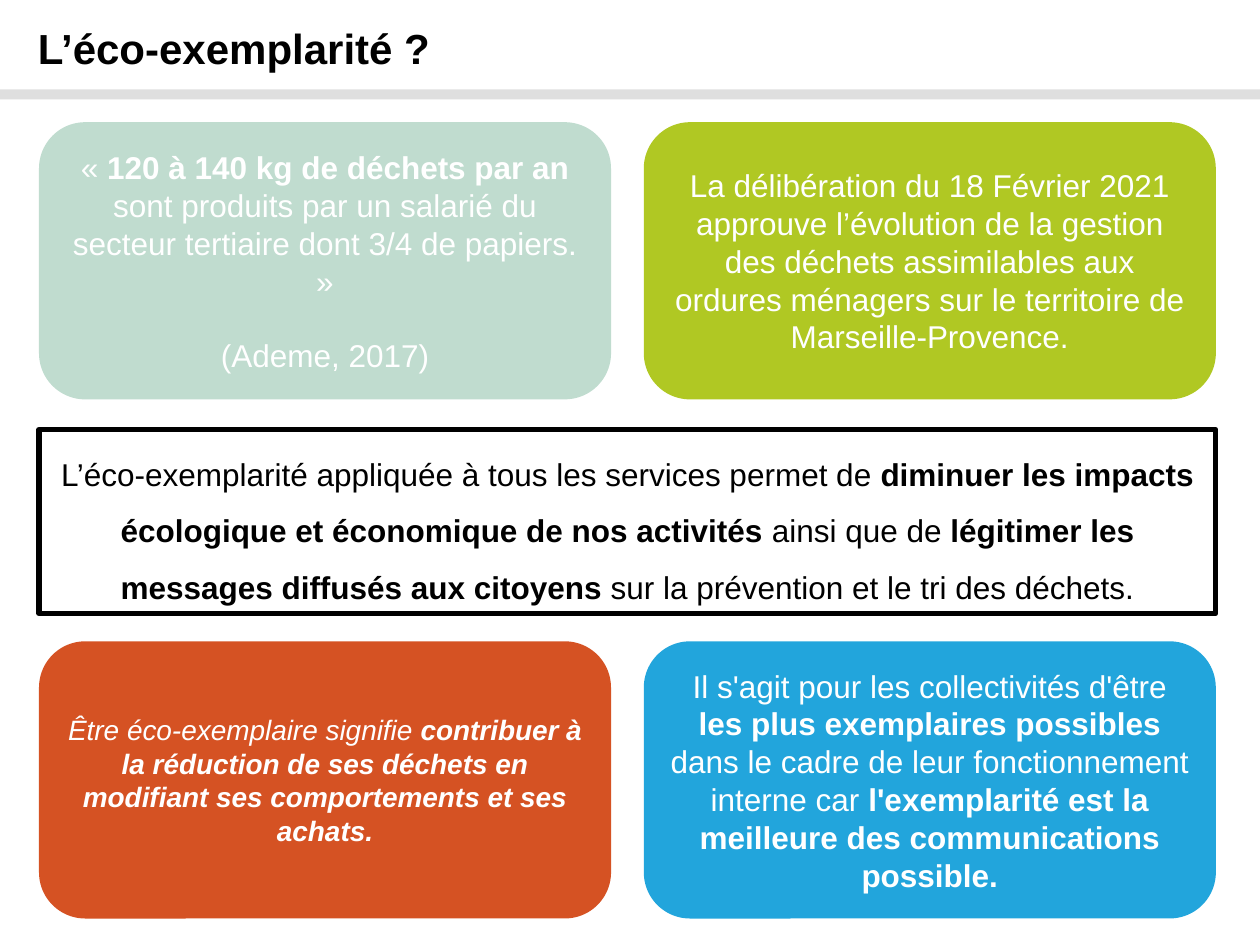
import collections
import dataclasses

import pptx
import pptx.dml.color
import pptx.enum.shapes
import pptx.enum.text
import pptx.util

Box = collections.namedtuple("Box", "left top width height")
Inches = pptx.util.Inches
SHAPES = pptx.enum.shapes.MSO_SHAPE
ALIGN = pptx.enum.text.PP_ALIGN
ANCHOR = pptx.enum.text.MSO_ANCHOR


@dataclasses.dataclass(frozen=True)
class Theme:
    """Colours and type sizes of the slide."""

    font: str = "Arial"
    title: int = 24
    body: int = 18
    small: int = 16
    dark: str = "000000"
    light: str = "FFFFFF"
    rule: str = "DFDFDF"
    mint: str = "C0DCCF"
    green: str = "B0C823"
    orange: str = "D55223"
    blue: str = "22A5DC"


THEME = Theme()
WIDTH, HEIGHT = 10, 7.5
MARGIN, GUTTER = 0.31, 0.26
COLUMN = 4.54
CARD_HEIGHT = 2.2
CONTENT_WIDTH = 2 * COLUMN + GUTTER
TITLE_BOX = Box(0.2, 0.13, 0.74 * WIDTH, 0.47)
RULE_BOX = Box(0, 0.71, WIDTH, 0.08)
MESSAGE_BOX = Box(MARGIN, 3.41, CONTENT_WIDTH, 1.46)
FACTS_TOP, GOALS_TOP = 0.97, 5.09

TITLE = "L’éco-exemplarité ?"
MESSAGE = (
    "L’éco-exemplarité appliquée à tous les services permet de *diminuer les impacts "
    "écologique et économique de nos activités *ainsi que de *légitimer les messages "
    "diffusés aux citoyens* sur la prévention et le tri des déchets."
)
WASTE = (
    "« *120 à 140 kg de déchets par an *sont produits par un salarié du "
    "secteur tertiaire dont 3/4 de papiers. »"
)
WASTE_SOURCE = "(Ademe, 2017)"
DECISION = (
    "La délibération du 18 Février 2021 approuve l’évolution de la gestion des déchets "
    "assimilables aux ordures ménagers sur le territoire de Marseille-Provence."
)
MEANING = (
    "Être éco-exemplaire signifie *contribuer à la réduction de ses déchets en "
    "modifiant ses comportements et ses achats."
)
EXAMPLE = (
    "Il s'agit pour les collectivités d'être *les plus exemplaires possibles* dans le "
    "cadre de leur fonctionnement interne car *l'exemplarité est la meilleure des "
    "communications possible."
)


def rgb(value):
    """Turn a hex string into a colour."""
    return pptx.dml.color.RGBColor.from_string(value)


def add_block(s, kind, box, fill=None):
    """Add a flat shape in the box, without outline or shadow."""
    sp = s.shapes.add_shape(kind, *map(Inches, box))
    sp.shadow.inherit = False
    sp.line.fill.background()
    if fill:
        sp.fill.solid()
        sp.fill.fore_color.rgb = rgb(fill)
    else:
        sp.fill.background()
    return sp


def write(p, text, size, color, align=ALIGN.CENTER, italic=False, bold=False):
    """Write a paragraph in which asterisks switch bold on and off."""
    p.alignment = align
    for i, part in enumerate(text.split("*")):
        r = p.add_run()
        r.text = part
        r.font.name = THEME.font
        r.font.size = pptx.util.Pt(size)
        r.font.color.rgb = rgb(color)
        r.font.bold = bold or i % 2 == 1
        r.font.italic = italic


def add_header(s, title_box, rule_box):
    """Place the title and the grey rule under it."""
    add_block(s, SHAPES.RECTANGLE, rule_box, THEME.rule)
    sp = s.shapes.title
    sp.left, sp.top, sp.width, sp.height = map(Inches, title_box)
    sp.fill.solid()
    sp.fill.fore_color.rgb = rgb(THEME.light)
    tf = sp.text_frame
    tf.auto_size = pptx.enum.text.MSO_AUTO_SIZE.NONE
    tf.vertical_anchor = ANCHOR.TOP
    p = tf.paragraphs[0]
    p.line_spacing = 1.0
    write(p, TITLE, THEME.title, THEME.dark, ALIGN.LEFT, bold=True)


def add_message(s, box):
    """Place the framed key message."""
    sp = add_block(s, SHAPES.RECTANGLE, box)
    sp.line.color.rgb = rgb(THEME.dark)
    sp.line.width = pptx.util.Pt(3)
    tf = sp.text_frame
    tf.word_wrap = True
    tf.vertical_anchor = ANCHOR.TOP
    p = tf.paragraphs[0]
    p.line_spacing = 1.5
    write(p, MESSAGE, THEME.body, THEME.dark)


def add_card(s, box, fill, texts, size=THEME.body, italic=False):
    """Place a rounded card, its paragraphs one line apart."""
    tf = add_block(s, SHAPES.ROUNDED_RECTANGLE, box, fill).text_frame
    tf.word_wrap = True
    tf.vertical_anchor = ANCHOR.MIDDLE
    for i, text in enumerate(texts):
        p = tf.add_paragraph() if i else tf.paragraphs[0]
        if i:
            p.space_before = pptx.util.Pt(1.15 * size)
        write(p, text, size, THEME.light, italic=italic)


def add_card_row(s, top, cards):
    """Place cards side by side on the column grid."""
    for i, card in enumerate(cards):
        box = Box(MARGIN + i * (COLUMN + GUTTER), top, COLUMN, CARD_HEIGHT)
        add_card(s, box, *card)


def main():
    """Build and save the slide."""
    prs = pptx.Presentation()
    prs.slide_width, prs.slide_height = Inches(WIDTH), Inches(HEIGHT)
    s = prs.slides.add_slide(prs.slide_layouts[5])
    add_header(s, TITLE_BOX, RULE_BOX)
    add_message(s, MESSAGE_BOX)
    add_card_row(s, FACTS_TOP, [
        (THEME.mint, [WASTE, WASTE_SOURCE]),
        (THEME.green, [DECISION]),
    ])
    add_card_row(s, GOALS_TOP, [
        (THEME.orange, [MEANING], THEME.small, True),
        (THEME.blue, [EXAMPLE]),
    ])
    prs.save("out.pptx")


if __name__ == "__main__":
    main()
